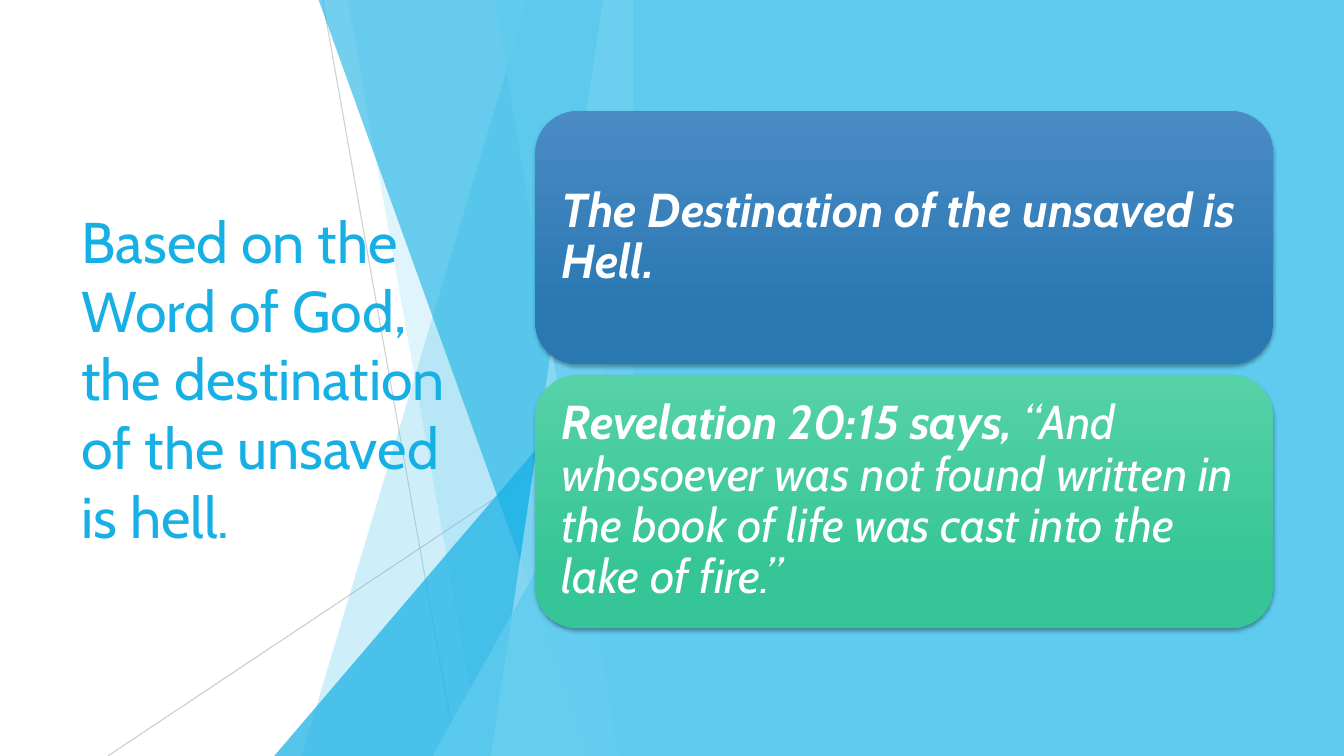
from dataclasses import dataclass

from lxml.etree import SubElement
from pptx import Presentation
from pptx.dml.color import RGBColor
from pptx.enum.shapes import MSO_CONNECTOR, MSO_SHAPE
from pptx.enum.text import MSO_ANCHOR
from pptx.oxml.ns import qn
from pptx.util import Inches, Pt


@dataclass(frozen=True)
class Theme:
    font: str = "Cabin"
    title_size: int = 41
    card_size: int = 34
    white: str = "FFFFFF"
    black: str = "000000"
    sky: str = "5FCBEF"
    azure: str = "17B0E4"
    pale: str = "9FE0F5"
    grey: str = "BFBFBF"
    blue: tuple = ("4A8BC6", "2A78B2")
    green: tuple = ("56D2A7", "36C596")


THEME = Theme()
WIDTH, HEIGHT = 13.33, 7.5
PANEL_LEFT = 6.28
CARD_LEFT, CARD_TOP, CARD_WIDTH, CARD_HEIGHT, CARD_STEP = 5.31, 1.1, 7.32, 2.51, 2.62


def set_format(target, values):
    for name, value in values.items():
        setattr(target, name, value)


def set_alpha(sp, percent):
    for color in sp._element.spPr.iter(qn("a:srgbClr")):
        SubElement(color, qn("a:alpha"), val=str(percent * 1000))


def paint(sp, color, alpha=100):
    sp.shadow.inherit = False
    sp.line.fill.background()
    sp.fill.solid()
    sp.fill.fore_color.rgb = RGBColor.from_string(color)
    if alpha < 100:
        set_alpha(sp, alpha)


def add_ray(s, x1, y1, x2, y2, alpha):
    sp = s.shapes.add_connector(
        MSO_CONNECTOR.STRAIGHT, Inches(x1), Inches(y1), Inches(x2), Inches(y2))
    sp.line.width = Pt(0.75)
    sp.line.color.rgb = RGBColor.from_string(THEME.grey)
    set_alpha(sp, alpha)
    SubElement(sp._element.spPr, qn("a:effectLst"))


def add_facet(s, top_x, bottom_x, color, alpha):
    corners = [(PANEL_LEFT, 0), (PANEL_LEFT, HEIGHT), (bottom_x, HEIGHT)]
    builder = s.shapes.build_freeform(Inches(top_x), 0)
    builder.add_line_segments([(Inches(x), Inches(y)) for x, y in corners], close=True)
    paint(builder.convert_to_shape(), color, alpha)


def add_wedge(s, left, top, color, alpha):
    sp = s.shapes.add_shape(
        MSO_SHAPE.ISOSCELES_TRIANGLE, Inches(left), Inches(top),
        Inches(PANEL_LEFT - left), Inches(HEIGHT - top))
    sp.adjustments[0] = 1
    paint(sp, color, alpha)


def write(tf, runs, size, color, line_spacing=1.0):
    set_format(tf, {"word_wrap": True, "vertical_anchor": MSO_ANCHOR.MIDDLE})
    p = tf.paragraphs[0]
    set_format(p, {"line_spacing": line_spacing})
    for text, style in runs:
        r = p.add_run()
        r.text = text
        set_format(r.font, {"name": THEME.font, "size": Pt(size), **style})
        r.font.color.rgb = RGBColor.from_string(color)
    return p


def add_title(s, text):
    sp = s.shapes.add_textbox(Inches(0.71), Inches(1.51), Inches(3.88), Inches(4.48))
    write(sp.text_frame, [(text, {})], THEME.title_size, THEME.azure)


def add_panel(s):
    sp = s.shapes.add_shape(
        MSO_SHAPE.RECTANGLE, Inches(PANEL_LEFT), 0,
        Inches(WIDTH - PANEL_LEFT), Inches(HEIGHT))
    paint(sp, THEME.sky)


def add_drop_shadow(sp):
    sp.shadow.inherit = False
    effects = sp._element.spPr.find(qn("a:effectLst"))
    shadow = SubElement(
        effects, qn("a:outerShdw"), blurRad=str(Pt(3)), dist=str(Pt(2)),
        dir="5400000", algn="ctr", rotWithShape="0")
    color = SubElement(shadow, qn("a:srgbClr"), val=THEME.black)
    SubElement(color, qn("a:alpha"), val="35000")


def add_card(s, row, colors, runs):
    sp = s.shapes.add_shape(
        MSO_SHAPE.ROUNDED_RECTANGLE, Inches(CARD_LEFT),
        Inches(CARD_TOP + row * CARD_STEP), Inches(CARD_WIDTH), Inches(CARD_HEIGHT))
    sp.line.fill.background()
    sp.fill.gradient()
    sp.fill.gradient_angle = 270
    for stop, position, color in zip(sp.fill.gradient_stops, (0, 0.78), colors):
        stop.position = position
        stop.color.rgb = RGBColor.from_string(color)
    add_drop_shadow(sp)
    tf = sp.text_frame
    sides = ("left", "top", "right", "bottom")
    set_format(tf, {f"margin_{side}": Inches(0.14) for side in sides})
    p = write(tf, runs, THEME.card_size, THEME.white, 0.9)
    p.alignment = 1


def add_backdrop(s):
    add_ray(s, 3.2, 0, 4.53, HEIGHT, 75)
    add_ray(s, PANEL_LEFT, 4.03, 1.07, HEIGHT, 80)
    add_facet(s, 5.23, 2.99, THEME.sky, 30)
    add_facet(s, 3.45, 4.78, THEME.sky, 20)
    add_wedge(s, 2.72, 3.33, THEME.azure, 72)
    add_facet(s, 3.16, 5.86, THEME.azure, 60)
    add_facet(s, 5.98, 4.87, THEME.pale, 70)
    add_facet(s, 4.91, 6.13, THEME.sky, 65)
    add_wedge(s, 4.29, 3.93, THEME.sky, 80)


def main():
    prs = Presentation()
    set_format(prs, {"slide_width": Inches(WIDTH), "slide_height": Inches(HEIGHT)})
    s = prs.slides.add_slide(prs.slide_layouts[6])
    add_backdrop(s)
    add_title(s, "Based on the Word of God, the destination of the unsaved is hell.")
    add_panel(s)
    strong = {"bold": True, "italic": True}
    quote = {"bold": False, "italic": True}
    cards = [
        (THEME.blue, [("The Destination of the unsaved is Hell.", strong)]),
        (THEME.green, [
            ("Revelation 20:15 says,", strong),
            (" “And whosoever was not found written in the book of life "
             "was cast into the lake of fire.”", quote),
        ]),
    ]
    for row, (colors, runs) in enumerate(cards):
        add_card(s, row, colors, runs)
    prs.save("out.pptx")


if __name__ == "__main__":
    main()
